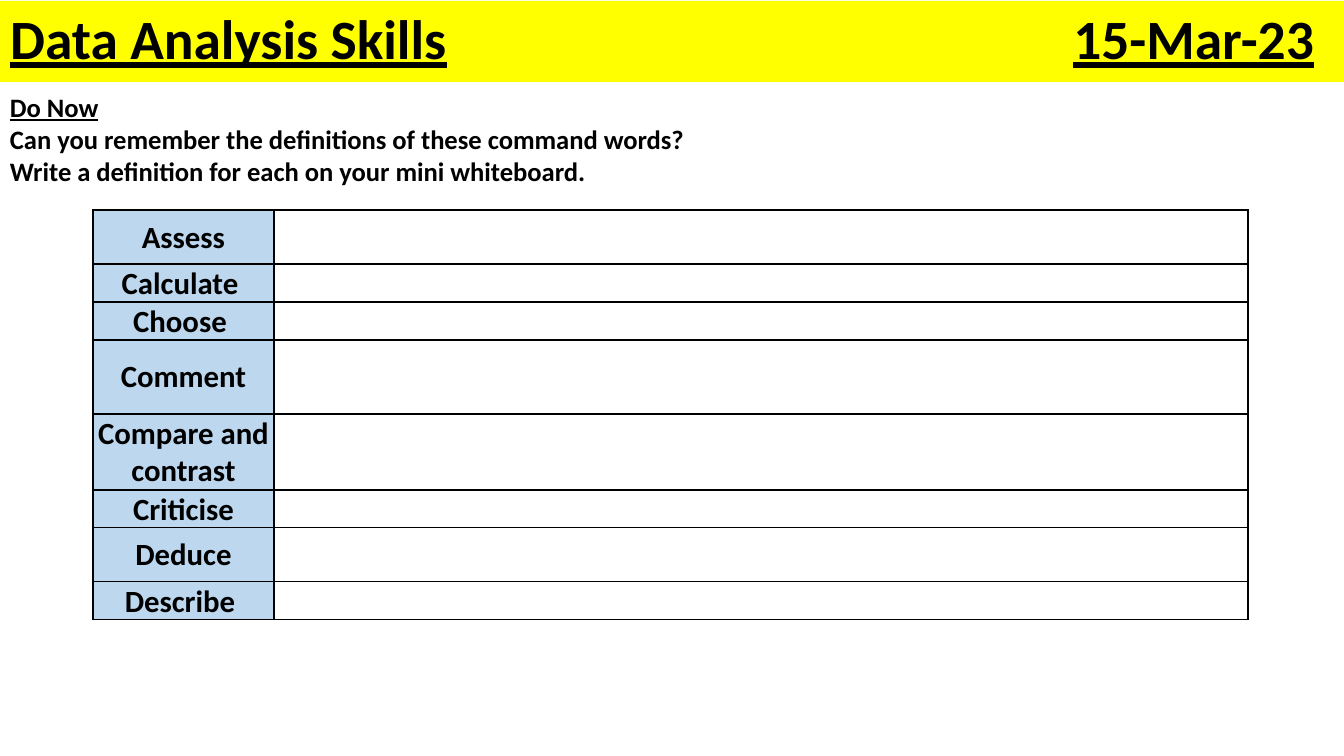
from lxml.etree import SubElement
from pptx import Presentation
from pptx.dml.color import RGBColor
from pptx.enum.text import MSO_ANCHOR as Anchor, MSO_AUTO_SIZE as AutoSize, PP_ALIGN as Align
from pptx.oxml import parse_xml
from pptx.oxml.ns import nsdecls, qn
from pptx.util import Pt

EMU_PER_PX = 12192000 / 1344
COLOURS = {"text": "000000", "banner": "FFFF00", "term": "BDD7EE", "blank": "FFFFFF"}
COMMAND_WORDS = [
    ("Assess", 54),
    ("Calculate ", 38),
    ("Choose ", 38),
    ("Comment", 74),
    ("Compare and contrast", 76),
    ("Criticise", 38),
    ("Deduce", 54),
    ("Describe ", 38),
]
DO_NOW_LINES = [
    ("Do Now", True),
    ("Can you remember the definitions of these command words?", False),
    ("Write a definition for each on your mini whiteboard.", False),
]


def px(length):
    """Turn whole pixels into EMU."""
    return round(length * EMU_PER_PX)


def colour(name):
    """Look up a named colour."""
    return RGBColor.from_string(COLOURS[name])


def add_text(paragraph, text, size, underline=False, align=Align.LEFT):
    """Add a bold run to a paragraph and align it."""
    paragraph.alignment = align
    run = paragraph.add_run()
    run.text = text
    font = run.font
    font.name = "Calibri"
    font.size = Pt(size)
    font.bold = True
    font.underline = underline
    font.color.rgb = colour("text")


def add_banner(slide, title, date):
    """Format the title as a banner with the date at its right."""
    shape = slide.shapes.title
    shape.left, shape.top, shape.width, shape.height = px(0), px(1), px(1344), px(81)
    shape.fill.solid()
    shape.fill.fore_color.rgb = colour("banner")
    frame = shape.text_frame
    frame.auto_size = AutoSize.NONE
    frame.vertical_anchor = Anchor.MIDDLE
    paragraph = frame.paragraphs[0]
    paragraph.line_spacing = 0.9
    for text, underline in [(title, True), ("\t", False), (date, True)]:
        add_text(paragraph, text, 39.6, underline)
    tabs = SubElement(paragraph._p.get_or_add_pPr(), qn("a:tabLst"))
    SubElement(tabs, qn("a:tab"), pos=str(px(1304)), algn="r")


def add_instructions(slide, lines):
    """Add the starter task below the banner."""
    frame = slide.shapes.add_textbox(px(0), px(86), px(1344), px(107)).text_frame
    frame.word_wrap = True
    for index, (text, underline) in enumerate(lines):
        paragraph = frame.add_paragraph() if index else frame.paragraphs[0]
        add_text(paragraph, text, 19, underline)


def format_cell(cell, fill):
    """Give a cell thin margins, a fill and black borders."""
    cell.margin_left = cell.margin_right = cell.margin_top = px(1)
    cell.margin_bottom = 0
    cell.vertical_anchor = Anchor.MIDDLE
    cell.fill.solid()
    cell.fill.fore_color.rgb = colour(fill)
    properties = cell._tc.get_or_add_tcPr()
    for index, side in enumerate("LRTB"):
        properties.insert(index, parse_xml(
            f'<a:ln{side} {nsdecls("a")} w="{Pt(1)}"><a:solidFill>'
            f'<a:srgbClr val="{COLOURS["text"]}"/></a:solidFill></a:ln{side}>'))


def add_word_table(slide, words):
    """Add the command words with blank cells for definitions."""
    height = sum(row_height for _, row_height in words)
    frame = slide.shapes.add_table(len(words), 2, px(93), px(210), px(1155), px(height))
    table = frame.table
    table.first_row = table.horz_banding = False
    for column, width in zip(table.columns, (181, 974)):
        column.width = px(width)
    for row, (word, row_height) in zip(table.rows, words):
        row.height = px(row_height)
        term, definition = row.cells
        format_cell(term, "term")
        format_cell(definition, "blank")
        add_text(term.text_frame.paragraphs[0], word, 22, align=Align.CENTER)


def main():
    """Build and save the slide."""
    presentation = Presentation()
    presentation.slide_width, presentation.slide_height = px(1344), px(756)
    slide = presentation.slides.add_slide(presentation.slide_layouts[5])
    add_banner(slide, "Data Analysis Skills", "15-Mar-23")
    add_instructions(slide, DO_NOW_LINES)
    add_word_table(slide, COMMAND_WORDS)
    presentation.save("out.pptx")


if __name__ == "__main__":
    main()
